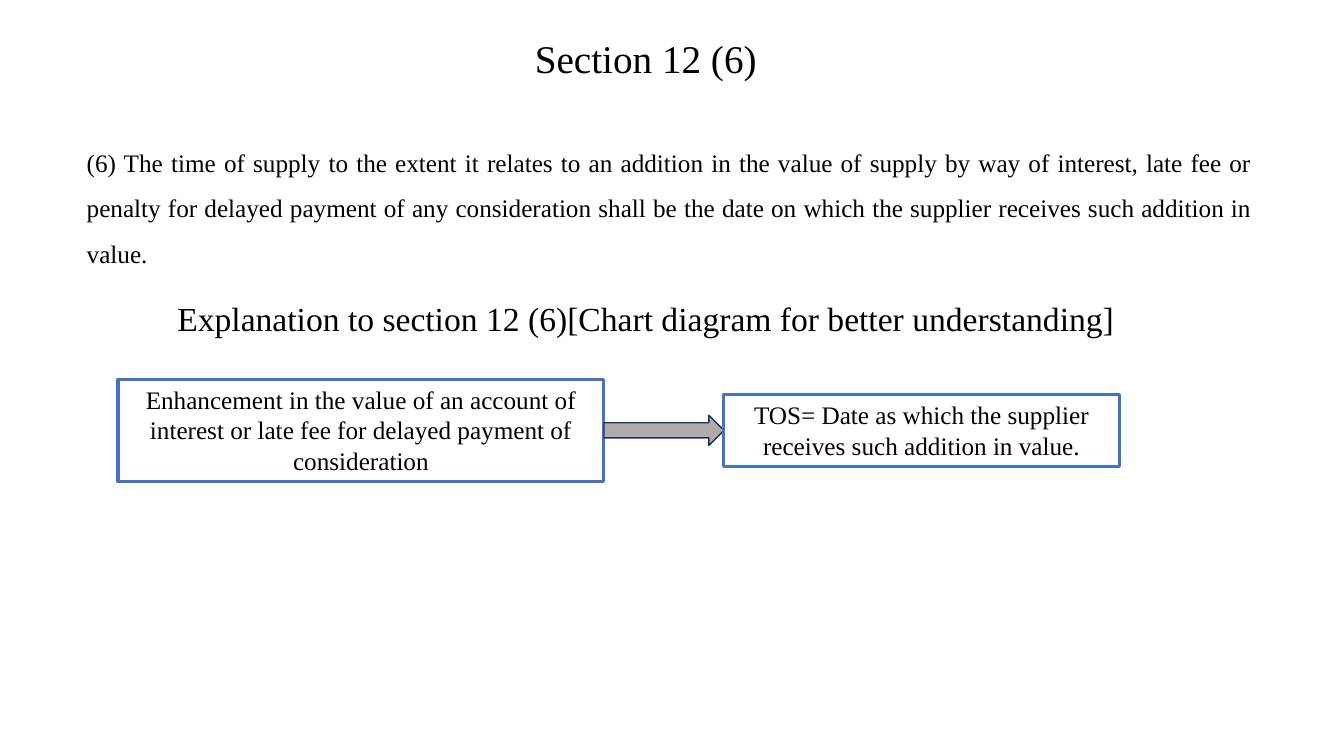
from pptx import Presentation, util as u
from pptx.dml import color
from pptx.enum import shapes, text
from pptx.oxml import xmlchemy, parse_xml, ns

COLORS = {"ink": "000000", "paper": "FFFFFF", "border": "4472C4",
          "arrow": "AFABAB", "arrow_edge": "1E3256"}
FONT = "Times New Roman"
CENTER, JUSTIFY = text.PP_ALIGN.CENTER, text.PP_ALIGN.JUSTIFY

TITLE = ("Section 12 (6)", (2.96, 0.29, 6.89, 0.57), 28)
CLAUSE = ("(6) The time of supply to the extent it relates to an addition in the value of "
          "supply by way of interest, late fee or penalty for delayed payment of any "
          "consideration shall be the date on which the supplier receives such addition "
          "in value.", (0.76, 1.26, 11.76, 1.41), 18)
HEADING = ("Explanation to section 12 (6)[Chart diagram for better understanding]",
           (1.5, 2.91, 9.81, 0.5), 24)
FLOW_MIDDLE = 4.27
FLOW_LEFT = 1.17
FLOW_GAP = 1.19
ARROW_HEIGHT = 0.3
FLOW = [
    ("Enhancement in the value of an account of interest or late fee for delayed "
     "payment of consideration", 4.82, 1.01),
    ("TOS= Date as which the supplier receives such addition in value.", 3.92, 0.71),
]


def rgb(name):
    return color.RGBColor.from_string(COLORS[name])


def place(box, area):
    for side, value in zip(("left", "top", "width", "height"), area):
        setattr(box, side, u.Inches(value))


def write(box, words, size, align=CENTER, spacing=1.0, anchor=text.MSO_ANCHOR.TOP):
    frame = box.text_frame
    frame_format = {"word_wrap": True, "auto_size": text.MSO_AUTO_SIZE.NONE,
                    "vertical_anchor": anchor}
    for name, value in frame_format.items():
        setattr(frame, name, value)
    para = frame.paragraphs[0]
    para_format = {"alignment": align, "line_spacing": spacing,
                   "space_before": u.Pt(0), "space_after": u.Pt(0)}
    for name, value in para_format.items():
        setattr(para, name, value)
    span = para.add_run()
    span.text = words
    for name, value in {"name": FONT, "size": u.Pt(size)}.items():
        setattr(span.font, name, value)
    span.font.color.rgb = rgb("ink")
    return para


def add_block(page, preset, area, fill, line, width):
    block = page.shapes.add_shape(preset, *(u.Inches(value) for value in area))
    block.shadow.inherit = False
    block.fill.solid()
    block.fill.fore_color.rgb = rgb(fill)
    block.line.color.rgb = rgb(line)
    block.line.width = u.Pt(width)
    return block


def main():
    deck = Presentation()
    deck.slide_width, deck.slide_height = u.Inches(13.33), u.Inches(7.5)
    page = deck.slides.add_slide(deck.slide_layouts[1])

    words, area, size = TITLE
    place(page.shapes.title, area)
    write(page.shapes.title, words, size)

    words, area, size = CLAUSE
    body = page.placeholders[1]
    place(body, area)
    para = write(body, words, size, JUSTIFY, 1.5)
    settings = para._p.get_or_add_pPr()
    settings.set("marL", "0")
    settings.set("indent", "0")
    settings.append(parse_xml(f"<a:buNone {ns.nsdecls('a')}/>"))

    words, area, size = HEADING
    heading = page.shapes.add_textbox(*(u.Inches(value) for value in area))
    write(heading, words, size)

    left = FLOW_LEFT
    for step, (words, width, height) in enumerate(FLOW):
        if step:
            area = (left, FLOW_MIDDLE - ARROW_HEIGHT / 2, FLOW_GAP, ARROW_HEIGHT)
            add_block(page, shapes.MSO_SHAPE.RIGHT_ARROW, area, "arrow", "arrow_edge", 1)
            left += FLOW_GAP
        area = (left, FLOW_MIDDLE - height / 2, width, height)
        box = add_block(page, shapes.MSO_SHAPE.RECTANGLE, area, "paper", "border", 2.25)
        write(box, words, 18)
        left += width

    deck.save("out.pptx")


if __name__ == "__main__":
    main()
